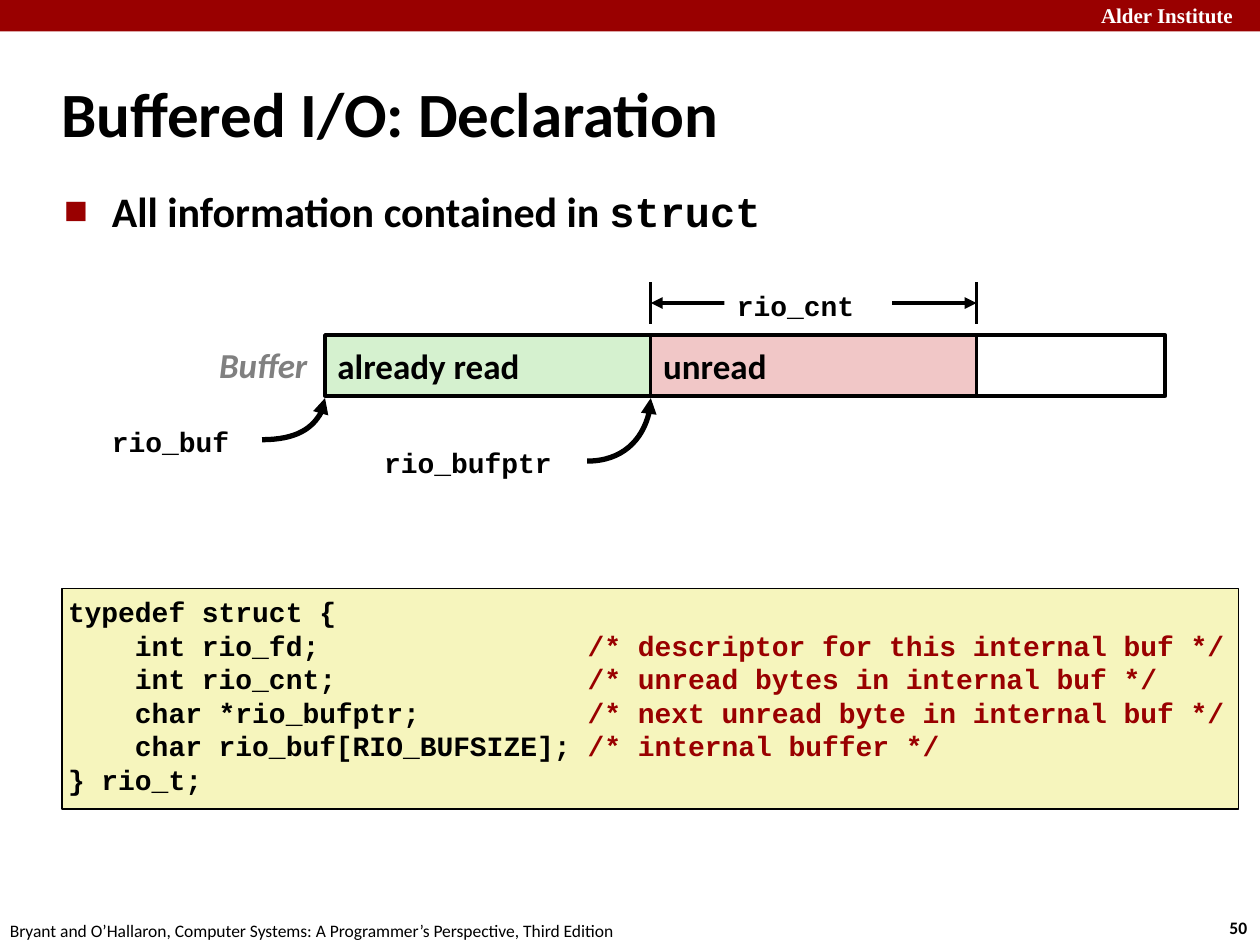
from pptx import Presentation
from pptx.dml.color import RGBColor
from pptx.enum.shapes import MSO_CONNECTOR, MSO_SHAPE
from pptx.enum.text import MSO_ANCHOR
from pptx.oxml.ns import qn
from pptx.util import Inches, Pt
from lxml.etree import SubElement

THEME = {
    "sans": "Calibri", "mono": "Courier New", "serif": "Times New Roman",
    "black": "000000", "white": "FFFFFF", "red": "990000", "gray": "808080",
    "read": "D5F1CF", "unread": "F1C7C7", "code": "F6F5BD",
    "title": 36, "body": 24, "label": 20, "mono_size": 16, "banner": 12, "footer": 10,
}

BANNER = "Alder Institute"
TITLE = "Buffered I/O: Declaration"
BULLET = ("All information contained in ", "struct")
FOOTER = "Bryant and O’Hallaron, Computer Systems: A Programmer’s Perspective, Third Edition"
PAGE = "50"
FIELDS = [
    ("int rio_fd;", "/* descriptor for this internal buf */"),
    ("int rio_cnt;", "/* unread bytes in internal buf */"),
    ("char *rio_bufptr;", "/* next unread byte in internal buf */"),
    ("char rio_buf[RIO_BUFSIZE];", "/* internal buffer */"),
]
SEGMENTS = [("already read", "read"), ("unread", "unread")]
# label, label box, start of the curve; each curve ends under a segment's left edge
POINTERS = [
    ("rio_buf", (0.79, 3.32, 1.14, 0.34), (2.08, 3.49)),
    ("rio_bufptr", (2.95, 3.49, 1.75, 0.34), (4.66, 3.66)),
]

# Buffer geometry
BUF_X, BUF_Y, BUF_W, BUF_H = 2.58, 2.66, 6.67, 0.48
SEG_W = 2.585
EDGES = [BUF_X + i * SEG_W for i in range(3)]
TICK_TOP, TICK_BOTTOM = 2.24, 2.57
CURVE_TIP = 3.16

prs = Presentation()
prs.slide_width, prs.slide_height = Inches(10), Inches(7.5)
slide = prs.slides.add_slide(prs.slide_layouts[6])


def rgb(name):
    return RGBColor.from_string(THEME[name])


def add_run(p, text, size, font="sans", color="black", bold=True, italic=False):
    r = p.add_run()
    r.text = text
    r.font.name, r.font.size = THEME[font], Pt(THEME[size])
    r.font.bold, r.font.italic = bold, italic
    r.font.color.rgb = rgb(color)


def add_text(box, text, size, wrap=True, anchor=MSO_ANCHOR.TOP, **style):
    tf = slide.shapes.add_textbox(*map(Inches, box)).text_frame
    tf.word_wrap, tf.vertical_anchor = wrap, anchor
    if text:
        add_run(tf.paragraphs[0], text, size, **style)
    return tf


def set_line(sp, width):
    sp.line.color.rgb = rgb("black")
    sp.line.width = Pt(width)


def add_rect(box, fill=None, line=None):
    sp = slide.shapes.add_shape(MSO_SHAPE.RECTANGLE, *map(Inches, box))
    sp.shadow.inherit = False
    if fill:
        sp.fill.solid()
        sp.fill.fore_color.rgb = rgb(fill)
    else:
        sp.fill.background()
    if line:
        set_line(sp, line)
    else:
        sp.line.fill.background()
    sp.text_frame.word_wrap = True
    sp.text_frame.vertical_anchor = MSO_ANCHOR.TOP
    sp.text_frame.paragraphs[0].alignment = 1
    return sp


def add_arrowheads(sp, *ends):
    for end in ends:
        SubElement(sp.line._get_or_add_ln(), qn(f"a:{end}"), type="triangle")


def add_line(x1, y1, x2, y2, width):
    sp = slide.shapes.add_connector(MSO_CONNECTOR.STRAIGHT, *map(Inches, (x1, y1, x2, y2)))
    set_line(sp, width)
    SubElement(sp._element.spPr, qn("a:effectLst"))
    return sp


def add_curve(tip, start):
    """Draw a quarter ellipse that leaves start level and rises into tip."""
    (tx, ty), (sx, sy) = tip, start
    k = 0.55  # control point ratio of a quarter ellipse
    points = [(tx, ty + k * (sy - ty)), (sx + k * (tx - sx), sy), (sx, sy)]
    builder = slide.shapes.build_freeform(Inches(tx), Inches(ty))
    builder.add_line_segments([tuple(map(Inches, pt)) for pt in points], close=False)
    sp = builder.convert_to_shape()
    first, *rest = sp._element.xpath(".//a:lnTo")
    first.tag = qn("a:cubicBezTo")
    for segment in rest:
        first.append(segment[0])
        segment.getparent().remove(segment)
    sp.shadow.inherit = False
    sp.fill.background()
    set_line(sp, 3)
    add_arrowheads(sp, "headEnd")


# Banner, footer and page number
add_rect((0, 0, 10, 0.25), "red")
add_text((8.64, -0.03, 1.43, 0.3), BANNER, "banner", font="serif", color="white")
add_text((9.66, 7.23, 0.37, 0.27), PAGE, "footer", wrap=False)
add_text((-0.02, 7.25, 5.08, 0.27), FOOTER, "footer", wrap=False, bold=False)

# Title and bullet
add_text((0.39, 0.48, 8.3, 0.83), TITLE, "title", anchor=MSO_ANCHOR.MIDDLE)
p = add_text((0.41, 1.42, 9.09, 0.66), "", "body").paragraphs[0]
for text, font in zip(BULLET, ("sans", "mono")):
    add_run(p, text, "body", font=font)
pPr = p._p.get_or_add_pPr()
pPr.set("marL", str(Inches(0.38)))
pPr.set("indent", str(-Inches(0.38)))
SubElement(SubElement(pPr, qn("a:buClr")), qn("a:srgbClr"), val=THEME["red"])
SubElement(pPr, qn("a:buSzPct"), val="60000")
SubElement(pPr, qn("a:buFont"), typeface=THEME["sans"])
SubElement(pPr, qn("a:buChar"), char="■")

# Code listing, with the comments in one column
tf = add_rect((0.49, 4.67, 9.34, 1.75), "code", 1).text_frame
tf.margin_left = tf.margin_right = tf.margin_top = tf.margin_bottom = Inches(0.05)
column = max(len(field) for field, _ in FIELDS) + 1
listing = [("typedef struct {", "")]
listing += [(" " * 4 + field.ljust(column), comment) for field, comment in FIELDS]
listing += [("} rio_t;", "")]
for i, (code, comment) in enumerate(listing):
    p = tf.add_paragraph() if i else tf.paragraphs[0]
    p.alignment = 1
    add_run(p, code, "mono_size", font="mono")
    if comment:
        add_run(p, comment, "mono_size", font="mono", color="red")

# Buffer
for x, (text, fill) in zip(EDGES, SEGMENTS):
    tf = add_rect((x, BUF_Y, SEG_W, BUF_H), fill, 1.5).text_frame
    tf.vertical_anchor = MSO_ANCHOR.MIDDLE
    add_run(tf.paragraphs[0], text, "label")
add_rect((BUF_X, BUF_Y, BUF_W, BUF_H), line=2.25)
add_text((1.64, 2.68, 0.93, 0.44), "Buffer", "label", wrap=False, color="gray", italic=True)

# Pointers into the buffer
for x, (text, box, start) in zip(EDGES, POINTERS):
    add_curve((x, CURVE_TIP), start)
    add_text(box, text, "mono_size", font="mono")

# Extent of the unread part
for x in EDGES[1:]:
    add_line(x, TICK_BOTTOM, x, TICK_TOP, 1.5)
middle = (TICK_TOP + TICK_BOTTOM) / 2
add_arrowheads(add_line(EDGES[1], middle, EDGES[2], middle, 2.25), "headEnd", "tailEnd")
tf = add_rect((5.75, TICK_TOP, 1.33, 0.34), "white").text_frame
add_run(tf.paragraphs[0], "rio_cnt", "mono_size", font="mono")

prs.save("out.pptx")
